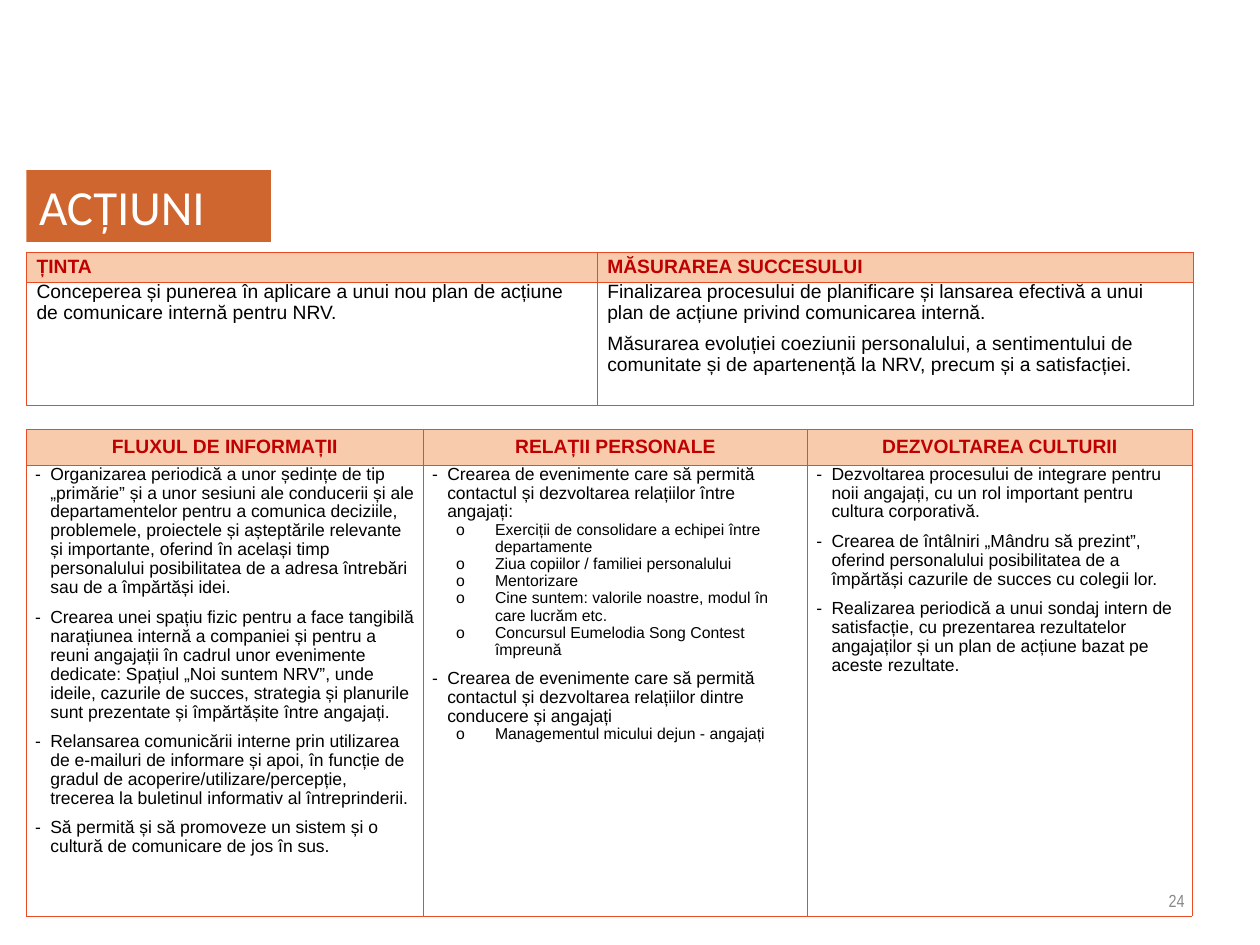
import pptx
import pptx.util
import pptx.dml.color
import pptx.enum.text
import pptx.oxml.ns
from lxml import etree

Inches = pptx.util.Inches
Pt = pptx.util.Pt
ALIGN = pptx.enum.text.PP_ALIGN
ANCHOR = pptx.enum.text.MSO_ANCHOR
qn = pptx.oxml.ns.qn

LEFT = 0.21
BULLETS = {"-": (0.12, -0.12, 10, 6), "o": (0.5, -0.31, 9, 0)}

GOALS = [
    [("", "Conceperea și punerea în aplicare a unui nou plan de acțiune de comunicare internă pentru NRV.")],
    [("", "Finalizarea procesului de planificare și lansarea efectivă a unui plan de acțiune privind comunicarea internă."),
     ("", "Măsurarea evoluției coeziunii personalului, a sentimentului de comunitate și de apartenență la NRV, precum și a satisfacției.")],
]
ACTIONS = [
    [("-", "Organizarea periodică a unor ședințe de tip „primărie” și a unor sesiuni ale conducerii și ale departamentelor pentru a comunica deciziile, problemele, proiectele și așteptările relevante și importante, oferind în același timp personalului posibilitatea de a adresa întrebări sau de a împărtăși idei."),
     ("-", "Crearea unei spațiu fizic pentru a face tangibilă narațiunea internă a companiei și pentru a reuni angajații în cadrul unor evenimente dedicate: Spațiul „Noi suntem NRV”, unde ideile, cazurile de succes, strategia și planurile sunt prezentate și împărtășite între angajați."),
     ("-", "Relansarea comunicării interne prin utilizarea de e-mailuri de informare și apoi, în funcție de gradul de acoperire/utilizare/percepție, trecerea la buletinul informativ al întreprinderii."),
     ("-", "Să permită și să promoveze un sistem și o cultură de comunicare de jos în sus.")],
    [("-", "Crearea de evenimente care să permită contactul și dezvoltarea relațiilor între angajați:"),
     ("o", "Exerciții de consolidare a echipei între departamente"),
     ("o", "Ziua copiilor / familiei personalului"),
     ("o", "Mentorizare"),
     ("o", "Cine suntem: valorile noastre, modul în care lucrăm etc."),
     ("o", "Concursul Eumelodia Song Contest împreună"),
     ("-", "Crearea de evenimente care să permită contactul și dezvoltarea relațiilor dintre conducere și angajați"),
     ("o", "Managementul micului dejun - angajați")],
    [("-", "Dezvoltarea procesului de integrare pentru noii angajați, cu un rol important pentru cultura corporativă."),
     ("-", "Crearea de întâlniri „Mândru să prezint”, oferind personalului posibilitatea de a împărtăși cazurile de succes cu colegii lor."),
     ("-", "Realizarea periodică a unui sondaj intern de satisfacție, cu prezentarea rezultatelor angajaților și un plan de acțiune bazat pe aceste rezultate.")],
]


def rgb(color):
    return pptx.dml.color.RGBColor.from_string(color)


class SlideBuilder:
    font = "Arial"
    accent = "D0662F"
    border = "E94C24"
    header_fill = "F7CBAC"
    header_text = "C00000"
    body_text = "000000"

    def __init__(self, prs):
        self.s = prs.slides.add_slide(prs.slide_layouts[5])

    def run(self, p, text, size, color, font=None, bold=False):
        r = p.add_run()
        r.text = text
        r.font.size = Pt(size)
        r.font.name = font or self.font
        r.font.bold = bold
        r.font.color.rgb = rgb(color)

    def title(self, text, x, y, w, h):
        sp = self.s.shapes.title
        sp.left, sp.top, sp.width, sp.height = map(Inches, (x, y, w, h))
        sp.fill.solid()
        sp.fill.fore_color.rgb = rgb(self.accent)
        tf = sp.text_frame
        tf.word_wrap = True
        tf.auto_size = pptx.enum.text.MSO_AUTO_SIZE.NONE
        tf.vertical_anchor = ANCHOR.TOP
        p = tf.paragraphs[0]
        p.alignment = ALIGN.LEFT
        self.run(p, text, 28, "FFFFFF", "Calibri")

    def page_number(self, text, x, y, w, h):
        sp = self.s.shapes.add_textbox(*map(Inches, (x, y, w, h)))
        tf = sp.text_frame
        tf.word_wrap = True
        tf.vertical_anchor = ANCHOR.MIDDLE
        p = tf.paragraphs[0]
        p.alignment = ALIGN.RIGHT
        self.run(p, text, 10, "888888", "Arial Narrow")

    def bullet(self, p, mark):
        indent, hanging, _, _ = BULLETS[mark]
        pPr = p._p.get_or_add_pPr()
        pPr.set("marL", str(Inches(indent)))
        pPr.set("indent", str(Inches(hanging)))
        color = etree.SubElement(pPr, qn("a:buClr"))
        etree.SubElement(color, qn("a:srgbClr"), val=self.body_text)
        etree.SubElement(pPr, qn("a:buFont"), typeface=self.font)
        etree.SubElement(pPr, qn("a:buChar"), char=mark)

    def cell_frame(self, cell, inset):
        cell.margin_left = cell.margin_right = Inches(inset)
        cell.margin_top = cell.margin_bottom = 0
        tcPr = cell._tc.get_or_add_tcPr()
        for side in ("a:lnL", "a:lnR", "a:lnT", "a:lnB"):
            ln = etree.SubElement(tcPr, qn(side), w=str(Pt(0.5)))
            fill = etree.SubElement(ln, qn("a:solidFill"))
            etree.SubElement(fill, qn("a:srgbClr"), val=self.border)

    def header_cell(self, cell, text, inset, align):
        self.cell_frame(cell, inset)
        cell.fill.solid()
        cell.fill.fore_color.rgb = rgb(self.header_fill)
        cell.vertical_anchor = ANCHOR.MIDDLE
        p = cell.text_frame.paragraphs[0]
        p.alignment = align
        self.run(p, text, 11, self.header_text, bold=True)

    def body_cell(self, cell, items, inset):
        self.cell_frame(cell, inset)
        cell.fill.background()
        tf = cell.text_frame
        for i, (mark, text) in enumerate(items):
            p = tf.add_paragraph() if i else tf.paragraphs[0]
            size, gap = BULLETS[mark][2:] if mark else (11, 6)
            p.line_spacing = 0.97
            p.space_before = Pt(gap if i else 0)
            if mark:
                self.bullet(p, mark)
            self.run(p, text, size, self.body_text)

    def table(self, x, y, widths, heights, headers, bodies, inset, align):
        frame = self.s.shapes.add_table(
            2, len(widths), *map(Inches, (x, y, sum(widths), sum(heights))))
        table = frame.table
        table.first_row = table.horz_banding = False
        for row, height in zip(table.rows, heights):
            row.height = Inches(height)
        for i, width in enumerate(widths):
            table.columns[i].width = Inches(width)
            self.header_cell(table.cell(0, i), headers[i], inset, align)
            self.body_cell(table.cell(1, i), bodies[i], inset)


def main():
    prs = pptx.Presentation()
    prs.slide_width, prs.slide_height = Inches(10), Inches(7.5)
    b = SlideBuilder(prs)
    b.page_number("24", 7.17, 6.95, 2.33, 0.4)
    b.title("ACȚIUNI", LEFT, 1.35, 1.94, 0.57)
    b.table(LEFT, 2, [4.53, 4.73], [0.24, 0.98],
            ["ȚINTA", "MĂSURAREA SUCCESULUI"], GOALS, 0.08, ALIGN.LEFT)
    b.table(LEFT, 3.41, [3.15, 3.05, 3.05], [0.28, 3.58],
            ["FLUXUL DE INFORMAȚII", "RELAȚII PERSONALE", "DEZVOLTAREA CULTURII"],
            ACTIONS, 0.07, ALIGN.CENTER)
    prs.save("out.pptx")


if __name__ == "__main__":
    main()
